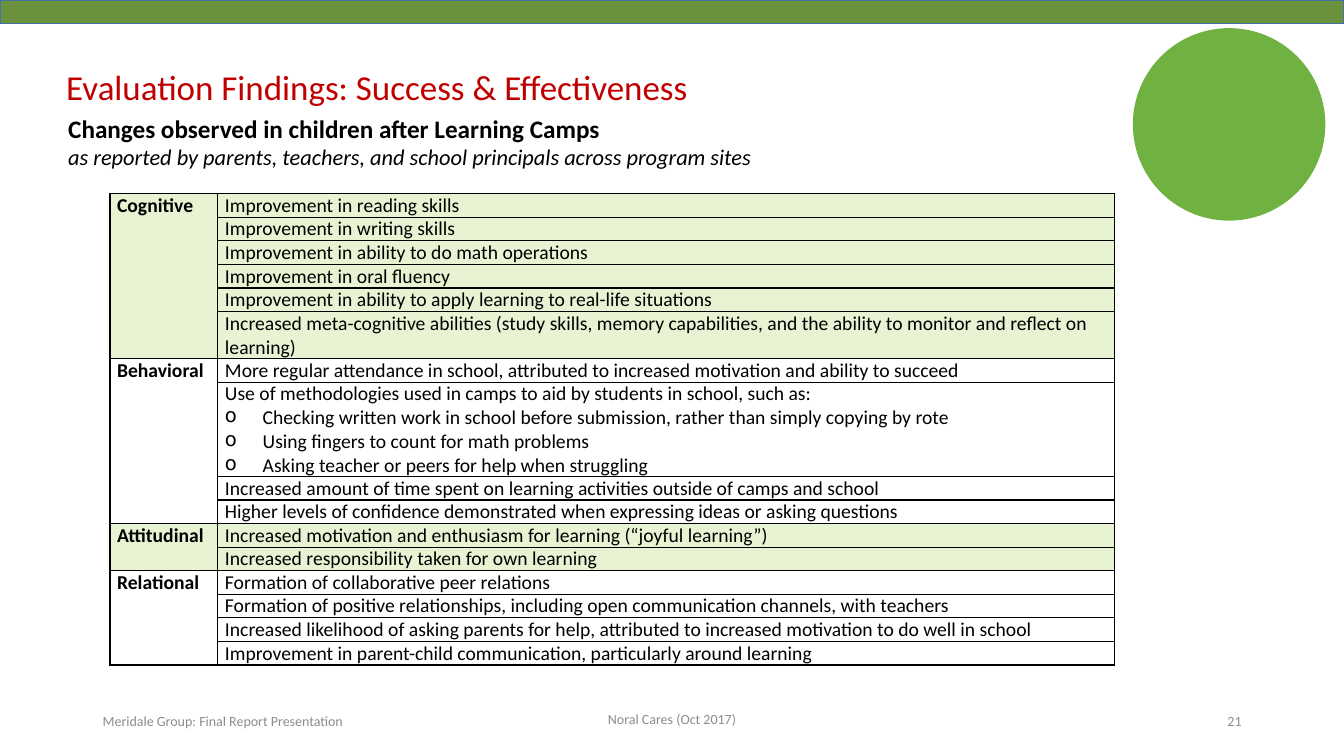
import pptx
import pptx.util
import pptx.dml.color
import pptx.enum.shapes
import pptx.enum.text
import pptx.oxml
from pptx.util import Cm, Pt

NS = 'xmlns:a="http://schemas.openxmlformats.org/drawingml/2006/main"'
ALIGN = pptx.enum.text.PP_ALIGN
SHAPE = pptx.enum.shapes.MSO_SHAPE

THEME = {
    "font": "Calibri",
    "title": "C00000", "text": "000000", "footer": "8C8C8C",
    "bar": "6C923D", "bar_line": "43739E", "band": "E8F3D3", "circle": "6FB242",
    "title_pt": 25, "heading_pt": 18, "sub_pt": 16, "table_pt": 14, "footer_pt": 10,
}


def rgb(key):
    return pptx.dml.color.RGBColor.from_string(THEME[key])


def write(tf, lines, align=ALIGN.LEFT):
    tf.word_wrap = True
    for i, (text, size, color, bold, italic) in enumerate(lines):
        p = tf.paragraphs[0] if i == 0 else tf.add_paragraph()
        p.alignment = align
        p.font.name = THEME["font"]
        p.font.size = Pt(THEME[size])
        p.font.bold = bold
        p.font.italic = italic
        p.font.color.rgb = rgb(color)
        p.add_run().text = text


prs = pptx.Presentation()
prs.slide_width, prs.slide_height = Cm(33.87), Cm(19.05)
s = prs.slides.add_slide(prs.slide_layouts[6])

bar = s.shapes.add_shape(SHAPE.RECTANGLE, 0, 0, prs.slide_width, Cm(0.6))
bar.shadow.inherit = False
bar.fill.solid()
bar.fill.fore_color.rgb = rgb("bar")
bar.line.color.rgb = rgb("bar_line")
bar.line.width = Pt(1)

circle = s.shapes.add_shape(SHAPE.OVAL, Cm(28.55), Cm(0.71), Cm(4.85), Cm(4.85))
circle.shadow.inherit = False
circle.fill.solid()
circle.fill.fore_color.rgb = rgb("circle")
circle.line.fill.background()

headings = [
    (1.42, 1.52, 25.76, 1.32,
     [("Evaluation Findings: Success & Effectiveness", "title_pt", "title", False, False)]),
    (1.47, 2.72, 26.95, 1.7,
     [("Changes observed in children after Learning Camps", "heading_pt", "text", True, False),
      ("as reported by parents, teachers, and school principals across program sites",
       "sub_pt", "text", False, True)]),
]
for x, y, w, h, lines in headings:
    sp = s.shapes.add_textbox(Cm(x), Cm(y), Cm(w), Cm(h))
    write(sp.text_frame, lines)

footers = [
    (2.34, 17.65, 7.62, "Meridale Group: Final Report Presentation", ALIGN.LEFT),
    (11.22, 17.62, 11.43, "Noral Cares (Oct 2017)", ALIGN.CENTER),
    (23.92, 17.65, 7.62, "21", ALIGN.RIGHT),
]
for x, y, w, text, align in footers:
    sp = s.shapes.add_textbox(Cm(x), Cm(y), Cm(w), Cm(1.01))
    sp.text_frame.vertical_anchor = pptx.enum.text.MSO_ANCHOR.MIDDLE
    write(sp.text_frame, [(text, "footer_pt", "footer", False, False)], align)

findings = {
    "Cognitive": [
        ["Improvement in reading skills"],
        ["Improvement in writing skills"],
        ["Improvement in ability to do math operations"],
        ["Improvement in oral fluency"],
        ["Improvement in ability to apply learning to real-life situations"],
        ["Increased meta-cognitive abilities (study skills, memory capabilities, "
         "and the ability to monitor and reflect on learning)"],
    ],
    "Behavioral": [
        ["More regular attendance in school, attributed to increased motivation and ability to succeed"],
        ["Use of methodologies used in camps to aid by students in school, such as:",
         "Checking written work in school before submission, rather than simply copying by rote",
         "Using fingers to count for math problems",
         "Asking teacher or peers for help when struggling"],
        ["Increased amount of time spent on learning activities outside of camps and school"],
        ["Higher levels of confidence demonstrated when expressing ideas or asking questions"],
    ],
    "Attitudinal": [
        ["Increased motivation and enthusiasm for learning (“joyful learning”)"],
        ["Increased responsibility taken for own learning"],
    ],
    "Relational": [
        ["Formation of collaborative peer relations"],
        ["Formation of positive relationships, including open communication channels, with teachers"],
        ["Increased likelihood of asking parents for help, attributed to increased motivation to do well in school"],
        ["Improvement in parent-child communication, particularly around learning"],
    ],
}
count = sum(len(group) for group in findings.values())
line_h = Cm(0.59)
table = s.shapes.add_table(count, 2, Cm(2.77), Cm(4.88), Cm(25.32), line_h * count).table
table.first_row = table.horz_banding = False
table.columns[0].width, table.columns[1].width = Cm(2.72), Cm(22.6)

top = 0
for n, (category, group) in enumerate(findings.items()):
    for i, lines in enumerate(group):
        table.rows[top + i].height = line_h * len(lines)
        for col, texts in enumerate([[category] if i == 0 else [], lines]):
            cell = table.cell(top + i, col)
            cell.margin_left = cell.margin_right = Cm(0.18)
            cell.margin_top = cell.margin_bottom = 0
            if n % 2 == 0:
                cell.fill.solid()
                cell.fill.fore_color.rgb = rgb("band")
            else:
                cell.fill.background()
            for k, side in enumerate("LRTB"):
                cell._tc.get_or_add_tcPr().insert(k, pptx.oxml.parse_xml(
                    f'<a:ln{side} {NS} w="12700"><a:solidFill><a:srgbClr val="{THEME["text"]}"/>'
                    f'</a:solidFill></a:ln{side}>'))
            write(cell.text_frame, [(t, "table_pt", "text", col == 0, False) for t in texts])
            for p in cell.text_frame.paragraphs[1:]:
                pPr = p._p.get_or_add_pPr()
                pPr.set("marL", str(Cm(0.95)))
                pPr.set("indent", str(-Cm(0.95)))
                pPr.insert(0, pptx.oxml.parse_xml(f'<a:buChar {NS} char="o"/>'))
    table.cell(top, 0).merge(table.cell(top + len(group) - 1, 0))
    top += len(group)

prs.save("out.pptx")
